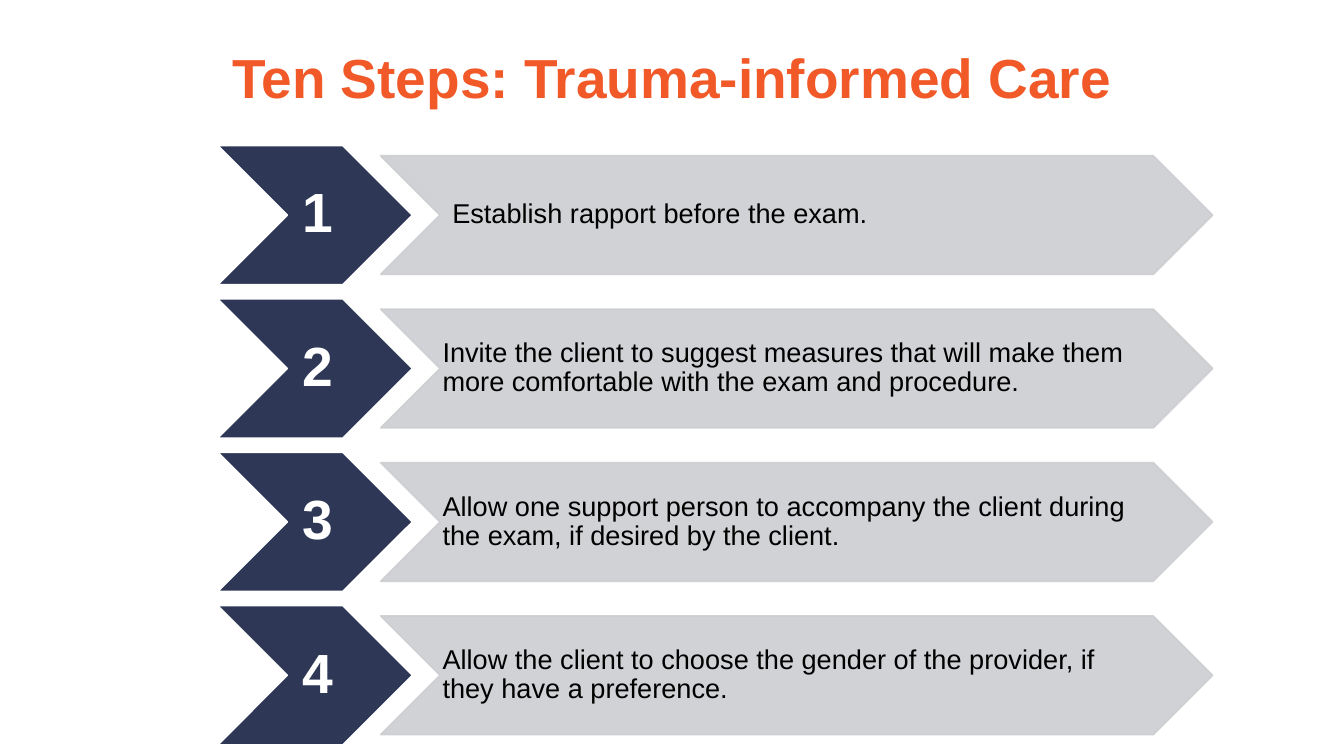
from dataclasses import dataclass

from lxml.etree import SubElement
from pptx import Presentation
from pptx.dml.color import RGBColor as RGB
from pptx.enum.shapes import MSO_SHAPE as Shape
from pptx.enum.text import MSO_ANCHOR as Anchor, PP_ALIGN as Align
from pptx.oxml.ns import qn
from pptx.util import Inches, Pt

HEADING = "Ten Steps: Trauma-informed Care"
NARROW_INSETS = (0.04, 0.02, 0, 0.02)
STEPS = [
    ("Establish rapport before the exam.", (0.2, 0.2, 0.2, 0.2)),
    ("Invite the client to suggest measures that will make them more "
     "comfortable with the exam and procedure.", NARROW_INSETS),
    ("Allow one support person to accompany the client during the exam, "
     "if desired by the client.", NARROW_INSETS),
    ("Allow the client to choose the gender of the provider, "
     "if they have a preference.", NARROW_INSETS),
]


@dataclass(frozen=True)
class Theme:
    font: str = "Arial"
    orange: RGB = RGB(0xF1, 0x59, 0x28)
    navy: RGB = RGB(0x2E, 0x38, 0x56)
    grey: RGB = RGB(0xCD, 0xCE, 0xD1)
    white: RGB = RGB(0xFF, 0xFF, 0xFF)
    black: RGB = RGB(0, 0, 0)
    heading_size: float = 64.8
    number_size: float = 65
    step_size: float = 32
    outline: float = 2
    grey_opacity: int = 90


THEME = Theme()
FIRST_MIDDLE, PITCH = 3.52, 2.51
NUMBER_HEIGHT, STEP_HEIGHT = 2.28, 1.94
NUMBER_INSETS = (0.09, 0.05, 0, 0.05)


def set_opacity(fill, percent):
    color = fill._xPr.find(qn("a:solidFill"))[0]
    SubElement(color, qn("a:alpha"), val=str(percent * 1000))


def add_chevron(slide, left, middle, width, height, fill, outline, opacity=100):
    chevron = slide.shapes.add_shape(
        Shape.CHEVRON, Inches(left), Inches(middle - height / 2), Inches(width), Inches(height))
    chevron.shadow.inherit = False
    chevron.fill.solid()
    chevron.fill.fore_color.rgb = fill
    chevron.line.color.rgb = outline
    chevron.line.width = Pt(THEME.outline)
    if opacity < 100:
        set_opacity(chevron.fill, opacity)
        set_opacity(chevron.line.fill, opacity)


def add_label(slide, wording, left, middle, width, height, size, color,
              insets=(0, 0, 0, 0), align=Align.LEFT, bold=False, spacing=1.0):
    label = slide.shapes.add_textbox(
        Inches(left), Inches(middle - height / 2), Inches(width), Inches(height))
    frame = label.text_frame
    frame.word_wrap = True
    frame.vertical_anchor = Anchor.MIDDLE
    (frame.margin_left, frame.margin_top,
     frame.margin_right, frame.margin_bottom) = map(Inches, insets)
    paragraph = frame.paragraphs[0]
    paragraph.alignment = align
    paragraph.line_spacing = spacing
    run = paragraph.add_run()
    run.text = wording
    run.font.name = THEME.font
    run.font.size = Pt(size)
    run.font.bold = bold
    run.font.color.rgb = color


def add_step(slide, number, wording, insets):
    middle = FIRST_MIDDLE + (number - 1) * PITCH
    add_chevron(slide, 3.56, middle, 3.19, NUMBER_HEIGHT, THEME.navy, THEME.white)
    add_label(slide, str(number), 4.7, middle, 0.9, NUMBER_HEIGHT, THEME.number_size,
              THEME.white, NUMBER_INSETS, Align.CENTER, bold=True, spacing=0.9)
    add_chevron(slide, 6.23, middle, 13.61, STEP_HEIGHT, THEME.grey, THEME.grey,
                THEME.grey_opacity)
    add_label(slide, wording, 7.2, middle, 11.68, STEP_HEIGHT, THEME.step_size,
              THEME.black, insets, spacing=0.9)


def main():
    deck = Presentation()
    deck.slide_width, deck.slide_height = Inches(21.99), Inches(12.37)
    slide = deck.slides.add_slide(deck.slide_layouts[6])
    add_label(slide, HEADING, 2.99, 1.245, 16, 1.21, THEME.heading_size,
              THEME.orange, align=Align.CENTER, bold=True)
    for number, (wording, insets) in enumerate(STEPS, start=1):
        add_step(slide, number, wording, insets)
    deck.save("out.pptx")


if __name__ == "__main__":
    main()
